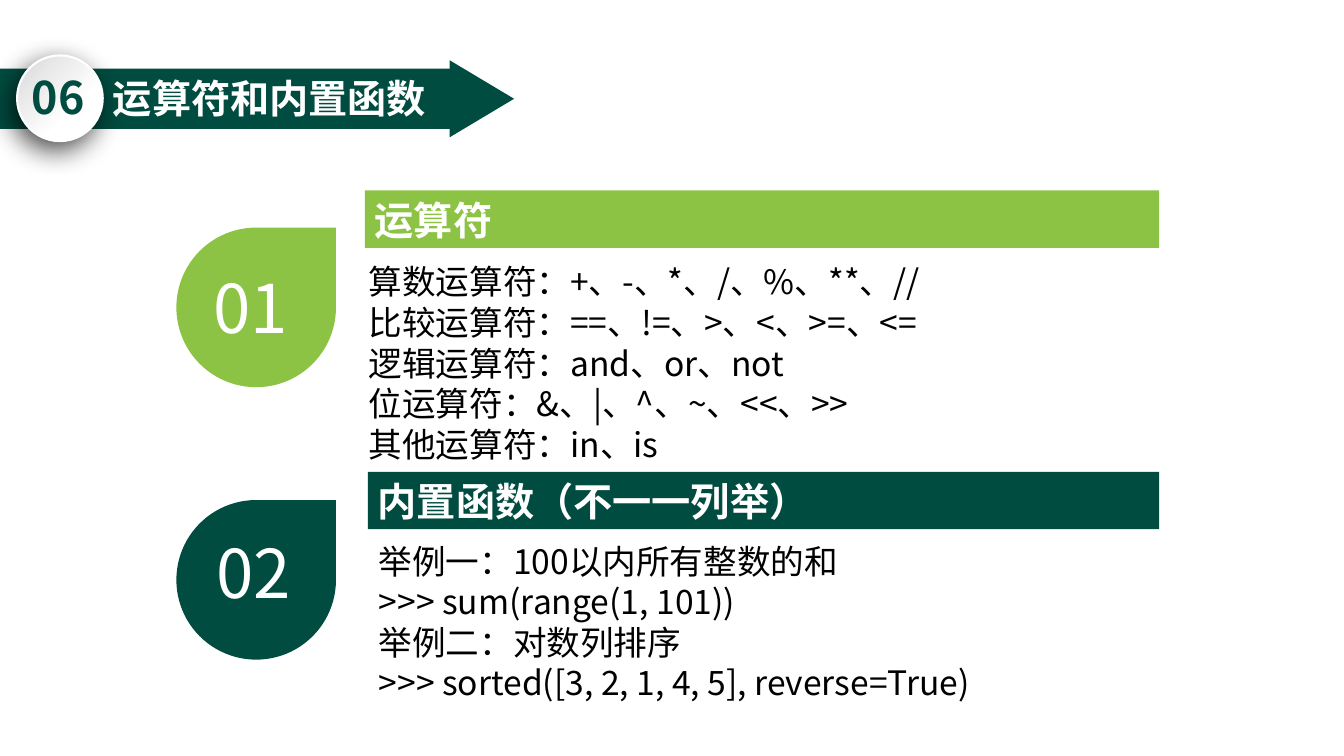
from dataclasses import dataclass

from lxml import etree
from pptx import Presentation
from pptx import util as u
from pptx.dml.color import RGBColor
from pptx.enum import shapes, text
from pptx.oxml import ns, parse_xml


@dataclass(frozen=True)
class Theme:
    font: str = "Noto Sans CJK SC"
    dark: str = "004C40"
    light: str = "8CC344"
    white: str = "FFFFFF"
    black: str = "000000"
    grey: str = "DBDBDD"
    body: int = 24
    heading: int = 28
    section: int = 32
    number: int = 48
    leading: float = 1.21


theme = Theme()


def add_block(page, kind, place, color):
    block = page.shapes.add_shape(kind, *map(u.Pt, place))
    block.shadow.inherit = False
    block.fill.solid()
    block.fill.fore_color.rgb = RGBColor.from_string(color)
    block.line.fill.background()
    return block


def write(box, words, size, color, bold=False, wrap=True, align=text.PP_ALIGN.LEFT):
    frame = box.text_frame
    frame.text = words
    frame.word_wrap = wrap
    frame.auto_size = text.MSO_AUTO_SIZE.NONE
    frame.vertical_anchor = text.MSO_ANCHOR.TOP
    for para in frame.paragraphs:
        para.alignment = align
        para.line_spacing = u.Pt(size * theme.leading)
        para.space_before = u.Pt(0)
        for span in para.runs:
            span.font.name = theme.font
            span.font.size = u.Pt(size)
            span.font.bold = bold
            span.font.color.rgb = RGBColor.from_string(color)
            east_asian = etree.SubElement(span.font._element, ns.qn("a:ea"))
            east_asian.set("typeface", theme.font)


deck = Presentation()
deck.slide_width, deck.slide_height = u.Pt(960), u.Pt(540)
page = deck.slides.add_slide(deck.slide_layouts[5])
page.background.fill.solid()
page.background.fill.fore_color.rgb = RGBColor.from_string(theme.white)

# Banner arrow
add_block(page, shapes.MSO_SHAPE.RECTANGLE, (0, 49, 322, 43), theme.dark)
arrowhead = add_block(page, shapes.MSO_SHAPE.ISOSCELES_TRIANGLE,
                      (316.7, 47.6, 55, 46), theme.dark)
arrowhead.rotation = 90

# Title, in front of the banner
title = page.shapes.title
title.left, title.top, title.width, title.height = map(u.Pt, (73.5, 49, 559, 63))
write(title, "运算符和内置函数", theme.heading, theme.white, bold=True)
arrowhead.element.addnext(title.element)

# Section badge with gradient and soft shadow
badge = add_block(page, shapes.MSO_SHAPE.OVAL, (12.2, 39.6, 61.2, 61.2), theme.white)
badge.line.color.rgb = RGBColor.from_string(theme.white)
badge.line.width = u.Pt(1.5)
properties = badge.element.spPr
gradient = parse_xml(
    f'<a:gradFill {ns.nsdecls("a")} rotWithShape="1"><a:gsLst>'
    f'<a:gs pos="34000"><a:srgbClr val="{theme.white}"/></a:gs>'
    f'<a:gs pos="96000"><a:srgbClr val="{theme.grey}"/></a:gs></a:gsLst>'
    '<a:path path="circle"><a:fillToRect l="100000" t="100000"/></a:path></a:gradFill>')
properties.replace(properties.find(ns.qn("a:solidFill")), gradient)
shadow = parse_xml(
    f'<a:outerShdw {ns.nsdecls("a")} blurRad="{u.Pt(20)}" dist="{u.Pt(7)}" '
    f'dir="7200000" algn="ctr" rotWithShape="0"><a:srgbClr val="{theme.black}">'
    '<a:alpha val="70000"/></a:srgbClr></a:outerShdw>')
properties.find(ns.qn("a:effectLst")).append(shadow)
section = page.shapes.add_textbox(*map(u.Pt, (15.8, 46, 55, 46)))
write(section, "06", theme.section, theme.dark, bold=True, wrap=False)

# Topics: colour, drop top, number place, bar place, body place, texts
topics = [
    ("01", theme.light, 162.6, (145.4, 186.5), (260.6, 136.1), (256.3, 182.9),
     "运算符",
     ["算数运算符：+、-、*、/、%、**、//",
      "比较运算符：==、!=、>、<、>=、<=",
      "逻辑运算符：and、or、not",
      "位运算符：&、|、^、~、<<、>>",
      "其他运算符：in、is"]),
    ("02", theme.dark, 357.2, (147.6, 375.8), (262.8, 337), (263.5, 382.3),
     "内置函数（不一一列举）",
     ["举例一：100以内所有整数的和",
      ">>> sum(range(1, 101))",
      "举例二：对数列排序",
      ">>> sorted([3, 2, 1, 4, 5], reverse=True)"]),
]
bar_right = 828
for number, color, drop_top, number_at, bar_at, body_at, heading, lines in topics:
    add_block(page, shapes.MSO_SHAPE.TEAR, (126, drop_top, 114, 114), color)
    label = page.shapes.add_textbox(*map(u.Pt, (*number_at, 71.3, 65.5)))
    write(label, number, theme.number, theme.white, wrap=False)

    bar = add_block(page, shapes.MSO_SHAPE.RECTANGLE,
                    (*bar_at, bar_right - bar_at[0], 41), color)
    write(bar, heading, theme.heading, theme.white, bold=True)

    height = len(lines) * theme.body * theme.leading + 7.2
    body = page.shapes.add_textbox(*map(u.Pt, (*body_at, 571, height)))
    write(body, "\n".join(lines), theme.body, theme.black,
          align=text.PP_ALIGN.JUSTIFY)

deck.save("out.pptx")
